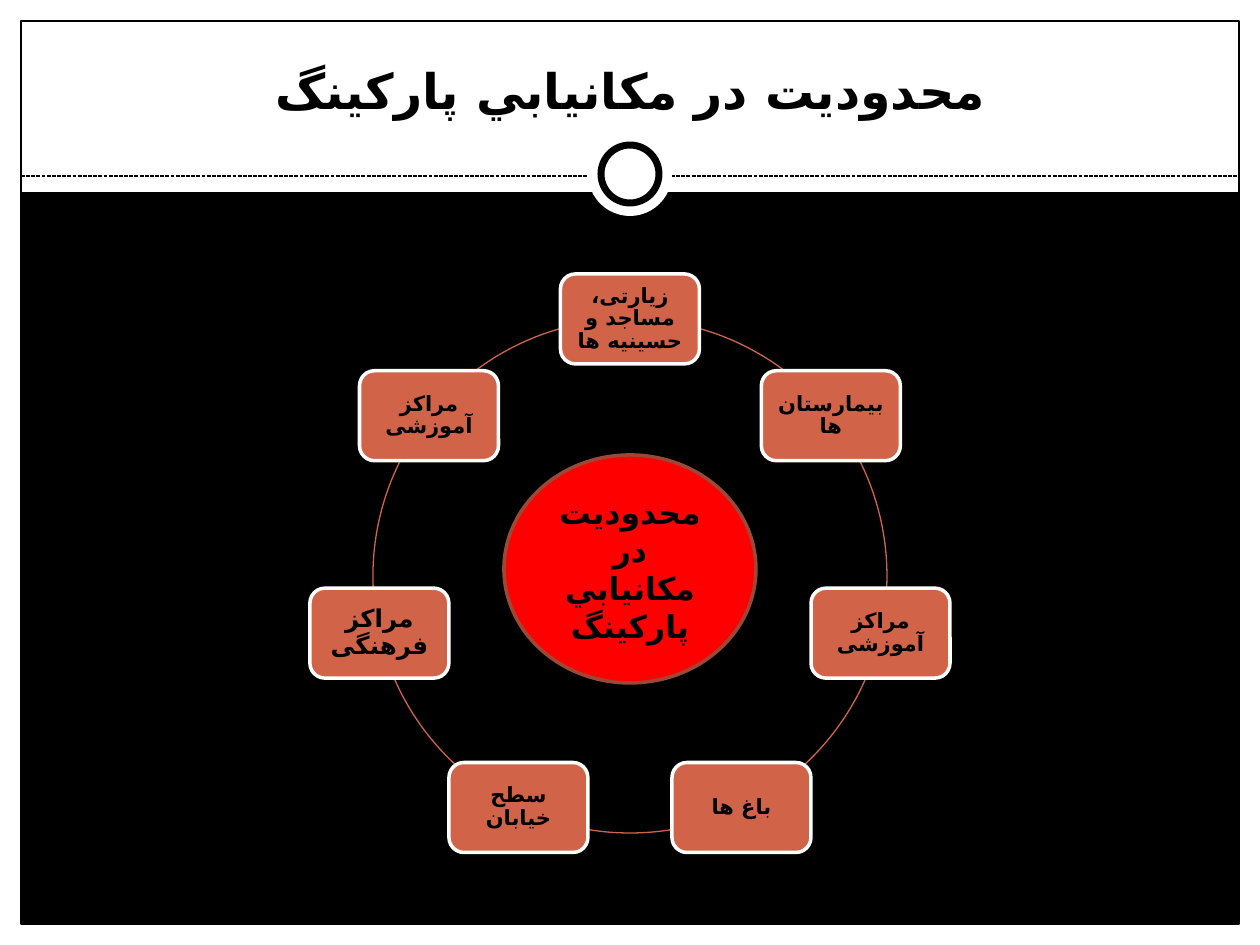
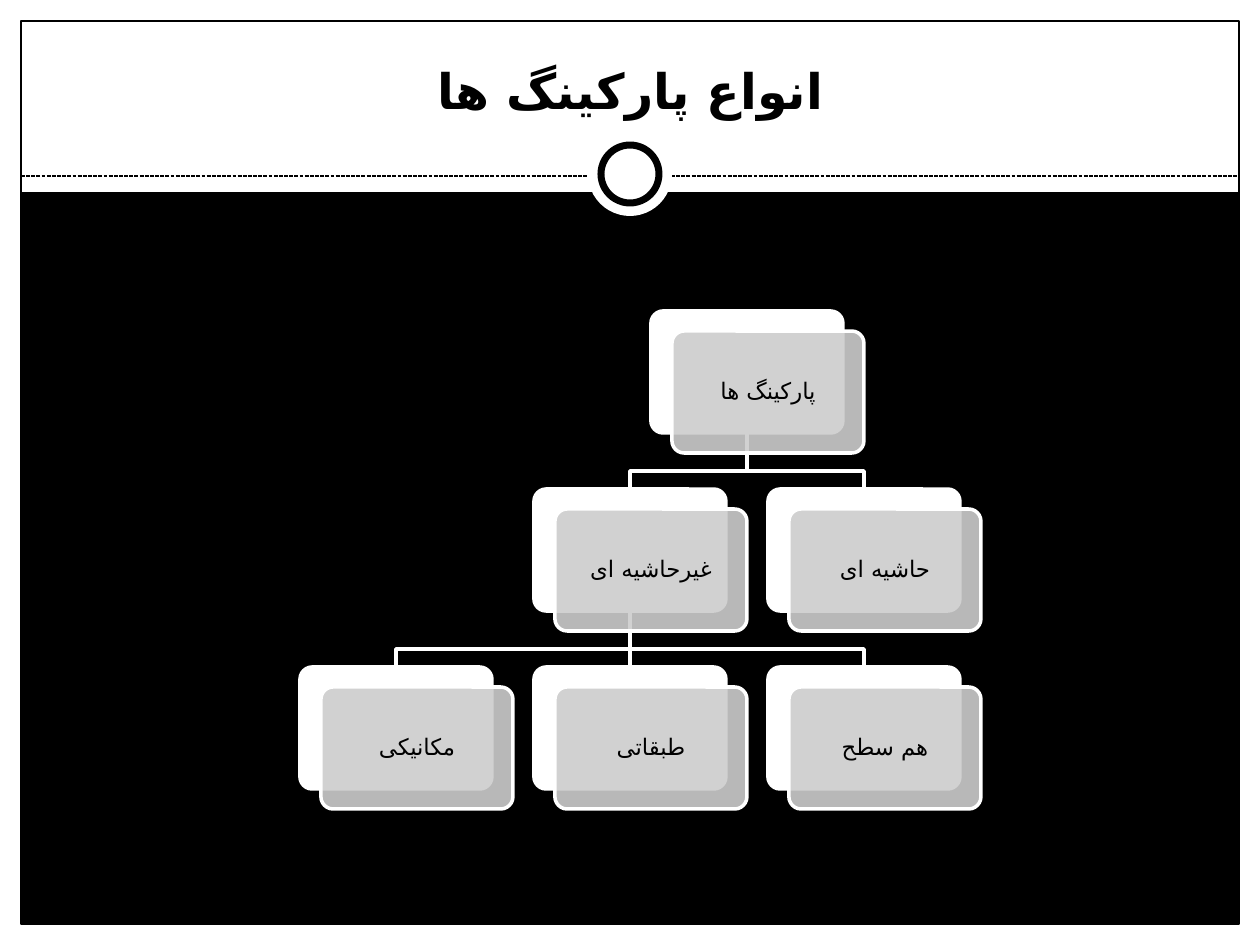
from math import cos, pi, sin

from lxml import etree
from pptx import Presentation
from pptx.dml.color import RGBColor
from pptx.enum.dml import MSO_LINE
from pptx.enum.shapes import MSO_CONNECTOR, MSO_SHAPE
from pptx.enum.text import MSO_ANCHOR, PP_ALIGN
from pptx.oxml.ns import qn
from pptx.util import Pt

RECT, OVAL, ROUNDED = MSO_SHAPE.RECTANGLE, MSO_SHAPE.OVAL, MSO_SHAPE.ROUNDED_RECTANGLE
STRAIGHT, DASH = MSO_CONNECTOR.STRAIGHT, MSO_LINE.SQUARE_DOT
MIDDLE, BOTTOM, CENTER = MSO_ANCHOR.MIDDLE, MSO_ANCHOR.BOTTOM, PP_ALIGN.CENTER

FONT, PERSIAN_FONT = "TeX Gyre Schola", "DejaVu Sans"
COLORS = {
    "black": "000000",
    "white": "FFFFFF",
    "clay": "D16349",
    "brown": "9B4936",
    "red": "FF0000",
    "grey": "CCCCCC",
}
PAGE_W, PAGE_H = 1260, 945
EDGE, HEADER_H, FOOTER_H = 21, 192, 43
DIVIDER_Y = 176
TITLE_BOX = (42, 21, 1176, 105)
RING_BOX = (373, 319, 514, 514)
TREE_BOX = (300, 311, 660, 478)

LIMITS = [
    ("زیارتی، مساجد و حسینیه ها", 12),
    ("بیمارستان ها", 12),
    ("مراکز آموزشی", 12),
    ("باغ ها", 12),
    ("سطح خیابان", 12),
    ("مراکز فرهنگی", 14),
    ("مراکز آموزشی", 12),
]
# Each parking type: column, row, parent
PARKING_TREE = {
    "پارکینگ ها": (1.5, 0, None),
    "غیرحاشیه ای": (1, 1, "پارکینگ ها"),
    "مکانیکی": (0, 2, "غیرحاشیه ای"),
    "طبقاتی": (1, 2, "غیرحاشیه ای"),
    "هم سطح": (2, 2, "غیرحاشیه ای"),
    "حاشیه ای": (2, 1, "پارکینگ ها"),
}


def emu(px):
    return round(px * 914400 / 126)


def color(name):
    return RGBColor.from_string(COLORS[name])


def set_line(line, name, width):
    line.color.rgb = color(name)
    line.width = Pt(width)


def add_block(page, kind, box, fill=None, line=None, width=0.75):
    block = page.shapes.add_shape(kind, *map(emu, box))
    block.shadow.inherit = False
    if fill:
        block.fill.solid()
        block.fill.fore_color.rgb = color(fill)
    else:
        block.fill.background()
    if line:
        set_line(block.line, line, width)
    else:
        block.line.fill.background()
    return block


def add_line(page, start, end, name, width):
    line = page.shapes.add_connector(STRAIGHT, *map(emu, (*start, *end)))
    set_line(line.line, name, width)
    etree.SubElement(line._element.spPr, qn("a:effectLst"))
    return line


def write(shape, text, size, bold=False, rtl=True, spacing=None, margin=None, anchor=MIDDLE):
    frame = shape.text_frame
    layout = {"word_wrap": True, "vertical_anchor": anchor}
    if margin is not None:
        sides = ("left", "top", "right", "bottom")
        layout.update({f"margin_{side}": emu(margin) for side in sides})
    for name, value in layout.items():
        setattr(frame, name, value)
    para = frame.paragraphs[0]
    para.alignment = CENTER
    if spacing:
        para.line_spacing = spacing
    if rtl:
        para._p.get_or_add_pPr().set("rtl", "1")
    span = para.add_run()
    span.text = text
    for name, value in {"name": FONT, "size": Pt(size), "bold": bold}.items():
        setattr(span.font, name, value)
    span.font.color.rgb = color("black")
    etree.SubElement(span._r.get_or_add_rPr(), qn("a:cs"), typeface=PERSIAN_FONT)


def add_frame(page):
    """Draw the white border, header band, footer band and medallion."""
    page.background.fill.solid()
    page.background.fill.fore_color.rgb = color("black")
    inner_w, inner_h = PAGE_W - 2 * EDGE, PAGE_H - 2 * EDGE
    bands = [
        ((0, PAGE_H - EDGE, PAGE_W, EDGE), "white"),
        ((0, 0, PAGE_W, HEADER_H), "white"),
        ((0, 0, EDGE, PAGE_H), "white"),
        ((PAGE_W - EDGE, 0, EDGE, PAGE_H), "white"),
        ((EDGE, PAGE_H - EDGE - FOOTER_H, inner_w, FOOTER_H), "black"),
    ]
    for band, fill in bands:
        add_block(page, RECT, band, fill)
    add_block(page, RECT, (EDGE, EDGE, inner_w, inner_h), line="black")
    divider = add_line(page, (EDGE, DIVIDER_Y), (PAGE_W - EDGE, DIVIDER_Y), "black", 0.75)
    divider.line.dash_style = DASH
    for size, line in ((84, None), (58, "black")):
        box = ((PAGE_W - size) / 2, 174 - size / 2, size, size)
        add_block(page, OVAL, box, "white", line, 4)


def add_page(deck, title):
    page = deck.slides.add_slide(deck.slide_layouts[6])
    add_frame(page)
    heading = page.shapes.add_textbox(*map(emu, TITLE_BOX))
    write(heading, title, 28, bold=True, anchor=BOTTOM)
    return page


def add_ring(page, box, center_text, labels):
    """Space the labels clockwise round a circle, starting at the top."""
    left, top, width, height = box
    mid_x, mid_y = left + width / 2, top + height / 2
    node_w, node_h = 139, 90
    add_block(page, OVAL, box, line="clay")
    for index, (label, size) in enumerate(labels):
        angle = 2 * pi * index / len(labels)
        x = mid_x + width / 2 * sin(angle) - node_w / 2
        y = mid_y - height / 2 * cos(angle) - node_h / 2
        node = add_block(page, ROUNDED, (x, y, node_w, node_h), "clay", "white", 2)
        write(node, label, size, bold=True, spacing=0.9, margin=round(size / 2))
    hub_w, hub_h = 252, 228
    hub_box = (mid_x - hub_w / 2, mid_y - 7 - hub_h / 2, hub_w, hub_h)
    hub = add_block(page, OVAL, hub_box, "red", "brown", 2)
    write(hub, center_text, 18, bold=True)


def add_card(page, box, text):
    """Draw a white card with a translucent labelled card over it; return the first."""
    left, top, width, height = box
    back = add_block(page, ROUNDED, box, "white", "white", 2)
    front = add_block(page, ROUNDED, (left + 21, top + 20, width, height), "grey", "white", 2)
    for card in (back, front):
        card.adjustments[0] = 0.1
    fill = front._element.spPr.find(".//" + qn("a:srgbClr"))
    etree.SubElement(fill, qn("a:alpha"), val="90000")
    write(front, text, 13, rtl=False, spacing=0.9, margin=6)
    return back


def add_branch(page, parent, child):
    """Join the foot of the parent card to the head of the child card."""
    start_x, start_y = parent.left + parent.width // 2, parent.top + parent.height
    end_x, end_y = child.left + child.width // 2, child.top
    if start_x == end_x:
        branch = add_line(page, (0, 0), (0, 0), "white", 2)
        branch.begin_connect(parent, 2)
        branch.end_connect(child, 0)
        return branch
    bend_y = end_y - emu(18)
    outline = page.shapes.build_freeform(start_x, start_y)
    outline.add_line_segments([(start_x, bend_y), (end_x, bend_y), (end_x, end_y)], close=False)
    branch = outline.convert_to_shape()
    branch.shadow.inherit = False
    branch.fill.background()
    set_line(branch.line, "white", 2)
    return branch


def add_tree(page, box, tree):
    left, top, width, height = box
    card_w, card_h = 192, 122
    step_x, step_y = (width - card_w) / 2, (height - card_h) / 2
    cards = {}
    for text, (column, row, _) in tree.items():
        place = (left + column * step_x, top + row * step_y, card_w, card_h)
        cards[text] = add_card(page, place, text)
    lowest = next(iter(cards.values()))
    for text, (_, _, parent) in tree.items():
        if parent:
            branch = add_branch(page, cards[parent], cards[text])
            lowest._element.addprevious(branch._element)


def main():
    deck = Presentation()
    deck.slide_width, deck.slide_height = emu(PAGE_W), emu(PAGE_H)
    limits_title = "محدوديت در مكانيابي پارکینگ"
    add_ring(add_page(deck, limits_title), RING_BOX, limits_title, LIMITS)
    add_tree(add_page(deck, "انواع پارکینگ ها"), TREE_BOX, PARKING_TREE)
    deck.save("out.pptx")


if __name__ == "__main__":
    main()
